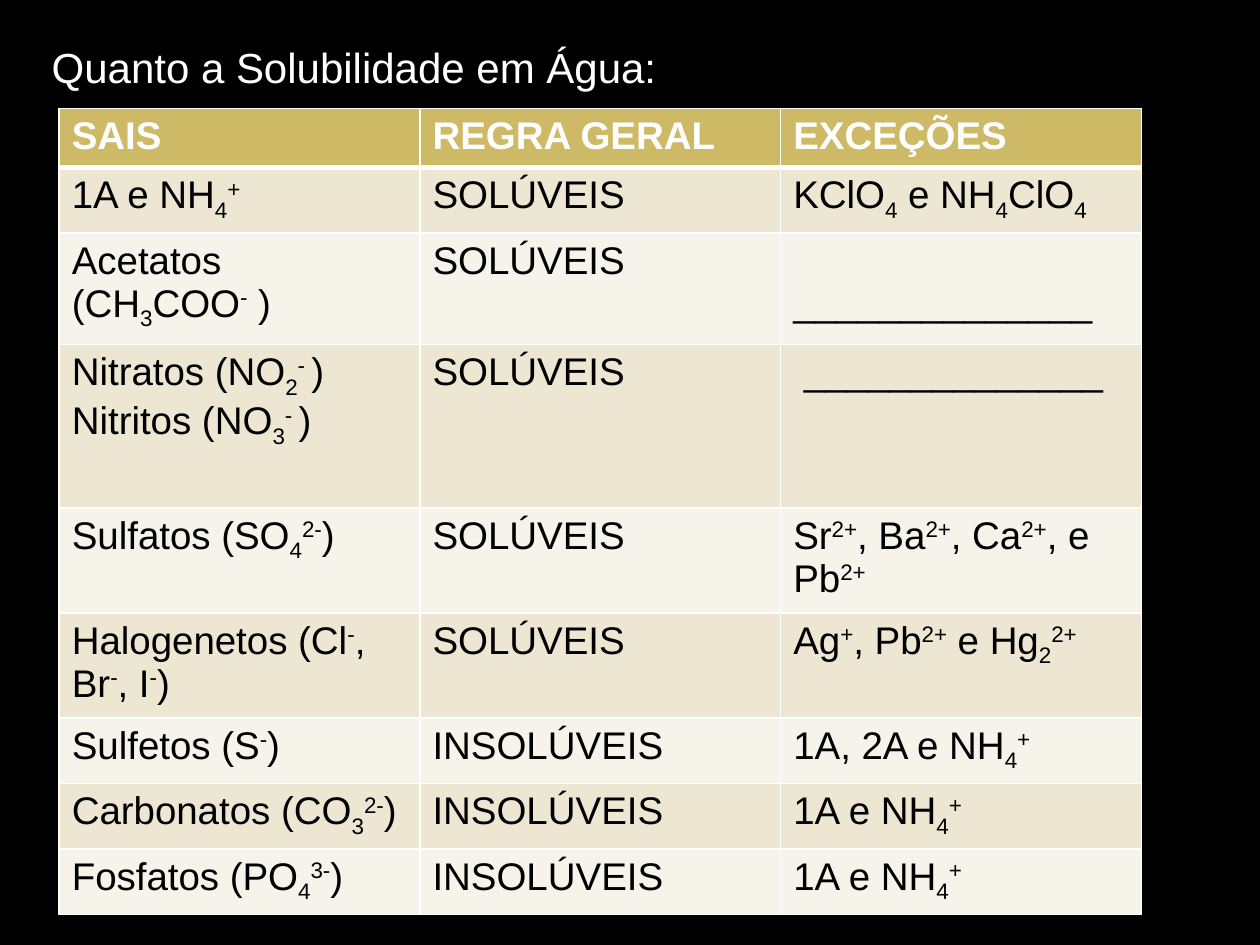
from lxml import etree
from pptx import Presentation
from pptx.dml.color import RGBColor
from pptx.enum.text import MSO_ANCHOR, MSO_AUTO_SIZE, PP_ALIGN
from pptx.oxml.ns import qn
from pptx.util import Inches, Pt

LEFT = PP_ALIGN.LEFT
TOP = MSO_ANCHOR.TOP
GROW = MSO_AUTO_SIZE.SHAPE_TO_FIT_TEXT
COLORS = {"back": "000000", "text": "000000", "light": "FFFFFF",
          "head": "CEB966", "odd": "EDE6D3", "even": "F6F3EA"}
SHIFTS = {"↓": "-25000", "↑": "30000"}
BLANK = "_" * 14
ROWS = [
    (0.47, "SAIS", "REGRA GERAL", "EXCEÇÕES"),
    (0.52, "1A e NH|↓4|↑+", "SOLÚVEIS", "KClO|↓4| e NH|↓4|ClO|↓4"),
    (0.88, "Acetatos (CH|↓3|COO|↑-| )", "SOLÚVEIS", BLANK),
    (1.3, "Nitratos (NO|↓2|↑- |)\nNitritos (NO|↓3|↑- |)", "SOLÚVEIS", " " + BLANK),
    (0.83, "Sulfatos (SO|↓4|↑2-|)", "SOLÚVEIS",
     "Sr|↑2+|, Ba|↑2+|, Ca|↑2+|, e Pb|↑2+"),
    (0.83, "Halogenetos (Cl|↑-|, Br|↑-|, I|↑-|)", "SOLÚVEIS",
     "Ag|↑+|, Pb|↑2+| e Hg|↓2|↑2+"),
    (0.52, "Sulfetos (S|↑-|)", "INSOLÚVEIS", "1A, 2A e NH|↓4|↑+"),
    (0.52, "Carbonatos (CO|↓3|↑2-|)", "INSOLÚVEIS", "1A e NH|↓4|↑+"),
    (0.52, "Fosfatos (PO|↓4|↑3-|)", "INSOLÚVEIS", "1A e NH|↓4|↑+"),
]


class Deck:
    """Holds the style and the current slide."""

    def __init__(self, font):
        self.font = font
        self.prs = Presentation()
        self.prs.slide_width, self.prs.slide_height = Inches(10), Inches(7.5)
        self.slide = self.prs.slides.add_slide(self.prs.slide_layouts[5])
        self.paint(self.slide.background.fill, "back")

    def paint(self, fill, color):
        fill.solid()
        fill.fore_color.rgb = RGBColor.from_string(COLORS[color])

    def put(self, frame, text, size, color, bold=False):
        for i, line in enumerate(text.split("\n")):
            para = frame.add_paragraph() if i else frame.paragraphs[0]
            para.alignment = LEFT
            for part in line.split("|"):
                run = para.add_run()
                run.text = part.lstrip("↓↑")
                font = run.font
                font.name, font.size, font.bold = self.font, Pt(size), bold
                font.color.rgb = RGBColor.from_string(COLORS[color])
                if part[0] in SHIFTS:
                    run._r.get_or_add_rPr().set("baseline", SHIFTS[part[0]])

    def title(self, text, x, y, w, h):
        box = self.slide.shapes.title
        box.left, box.top, box.width, box.height = map(Inches, (x, y, w, h))
        frame = box.text_frame
        frame.word_wrap, frame.auto_size = True, GROW
        self.put(frame, text, 24, "light")

    def border(self, cell, side, width):
        props = cell._tc.get_or_add_tcPr()
        line = etree.SubElement(props, qn("a:ln" + side), w=str(Pt(width)))
        fill = etree.SubElement(line, qn("a:solidFill"))
        etree.SubElement(fill, qn("a:srgbClr"), val=COLORS["light"])

    def cell(self, cell, text, row):
        for side in "LRTB":
            thick = (row, side) in ((0, "B"), (1, "T"))
            self.border(cell, side, 3 if thick else 1)
        self.paint(cell.fill, ("odd" if row % 2 else "even") if row else "head")
        cell.vertical_anchor = TOP
        self.put(cell.text_frame, text, 22, "text" if row else "light", not row)

    def table(self, rows, x, y, w):
        high = sum(row[0] for row in rows)
        count = len(rows[0]) - 1
        grid = self.slide.shapes.add_table(
            len(rows), count, Inches(x), Inches(y), Inches(w), Inches(high)).table
        for r, (tall, *texts) in enumerate(rows):
            grid.rows[r].height = Inches(tall)
            for c, text in enumerate(texts):
                self.cell(grid.cell(r, c), text, r)
        return grid


def main():
    deck = Deck("Arial")
    deck.title("Quanto a Solubilidade em Água:", 0.31, 0.28, 5.55, 0.5)
    grid = deck.table(ROWS, 0.47, 0.86, 8.59)
    grid.cell(2, 2).margin_top = Inches(0.39)
    deck.prs.save("out.pptx")


if __name__ == "__main__":
    main()
